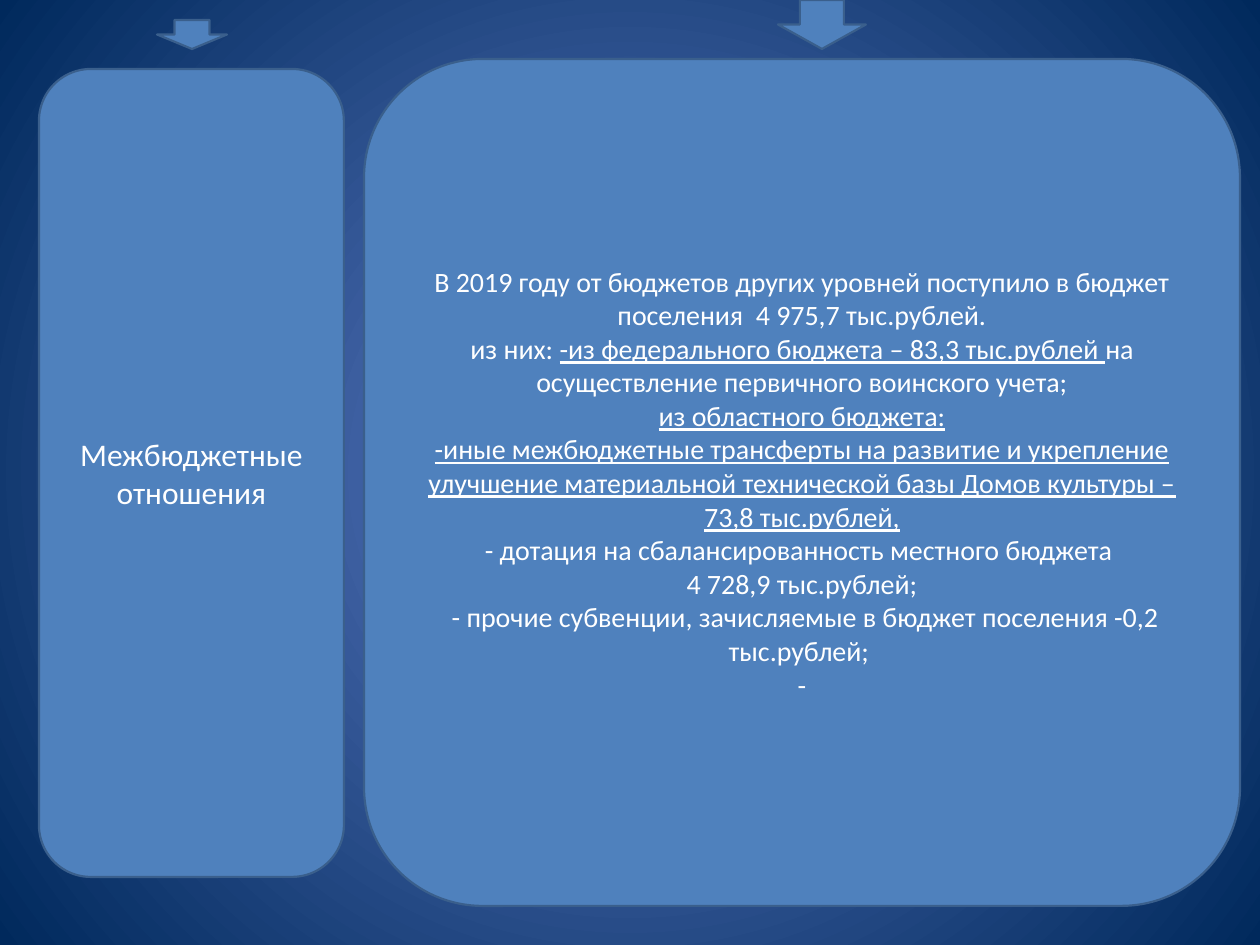
from dataclasses import dataclass

from lxml import etree
from pptx import Presentation
from pptx.dml.color import RGBColor
from pptx.enum.shapes import MSO_SHAPE
from pptx.enum.text import MSO_ANCHOR, PP_ALIGN
from pptx.oxml import parse_xml
from pptx.oxml.ns import nsdecls, qn
from pptx.util import Emu, Pt

ROUNDED = MSO_SHAPE.ROUNDED_RECTANGLE
DOWN_ARROW = MSO_SHAPE.DOWN_ARROW
MIDDLE = MSO_ANCHOR.MIDDLE
CENTER = PP_ALIGN.CENTER
PX = 914400 / 126

HEADING = [[("Межбюджетные отношения", False)]]
TRANSFERS = [
    [("В 2019 году от бюджетов других уровней поступило в бюджет поселения  4 975,7 тыс.рублей.", False)],
    [("из них: ", False),
     ("-из федерального бюджета – 83,3 тыс.рублей ", True),
     ("на осуществление первичного воинского учета;", False)],
    [("из областного бюджета:", True)],
    [("-иные межбюджетные трансферты на развитие и укрепление улучшение материальной "
      "технической базы Домов культуры – 73,8 тыс.рублей,", True)],
    [("- дотация на сбалансированность местного бюджета ", False)],
    [("4 728,9 тыс.рублей;", False)],
    [(" - прочие субвенции, зачисляемые в бюджет поселения -0,2 тыс.рублей; ", False)],
    [("-", False)],
]


@dataclass(frozen=True)
class Theme:
    font: str = "Calibri"
    heading: int = 18
    body: int = 16
    line_width: float = 1.25
    fill: str = "4F81BD"
    line: str = "3A5F8C"
    text: str = "FFFFFF"
    glow: tuple = ("5E7CC5", "00295C")


class Deck:
    """Draws the elements of the current slide in one theme."""

    def __init__(self, prs, theme):
        self.theme = theme
        self.s = prs.slides.add_slide(prs.slide_layouts[6])

    def background(self):
        fill = self.s.background.fill
        fill.gradient()
        for stop, color in zip(fill.gradient_stops, self.theme.glow):
            stop.color.rgb = RGBColor.from_string(color)
        lin = next(self.s.element.iter(qn("a:lin")))
        radial = parse_xml(f'<a:path {nsdecls("a")} path="circle"/>')
        center = {side: "50000" for side in "ltrb"}
        etree.SubElement(radial, qn("a:fillToRect"), center)
        lin.getparent().replace(lin, radial)

    def shape(self, kind, box):
        sp = self.s.shapes.add_shape(kind, *(Emu(round(v * PX)) for v in box))
        sp.shadow.inherit = False
        sp.fill.solid()
        sp.fill.fore_color.rgb = RGBColor.from_string(self.theme.fill)
        sp.line.color.rgb = RGBColor.from_string(self.theme.line)
        sp.line.width = Pt(self.theme.line_width)
        return sp

    def arrow(self, box):
        return self.shape(DOWN_ARROW, box)

    def panel(self, box, paragraphs, size, radius=0.17):
        sp = self.shape(ROUNDED, box)
        sp.adjustments[0] = radius
        tf = sp.text_frame
        tf.word_wrap = True
        tf.vertical_anchor = MIDDLE
        for i, runs in enumerate(paragraphs):
            p = tf.add_paragraph() if i else tf.paragraphs[0]
            p.alignment = CENTER
            for text, underline in runs:
                self.run(p, text, size=Pt(size), underline=underline)
        return sp

    def run(self, p, text, **formats):
        r = p.add_run()
        r.text = text
        for name, value in {"name": self.theme.font, **formats}.items():
            setattr(r.font, name, value)
        r.font.color.rgb = RGBColor.from_string(self.theme.text)


def main():
    prs = Presentation()
    prs.slide_width, prs.slide_height = (Emu(round(v * PX)) for v in (1260, 945))
    theme = Theme()
    deck = Deck(prs, theme)
    deck.background()
    deck.panel((39, 69, 305, 808), HEADING, theme.heading)
    deck.panel((364, 59, 876, 847), TRANSFERS, theme.body, radius=0.14)
    deck.arrow((157, 20, 70, 29))
    deck.arrow((778, 0, 88, 49))
    prs.save("out.pptx")


if __name__ == "__main__":
    main()
